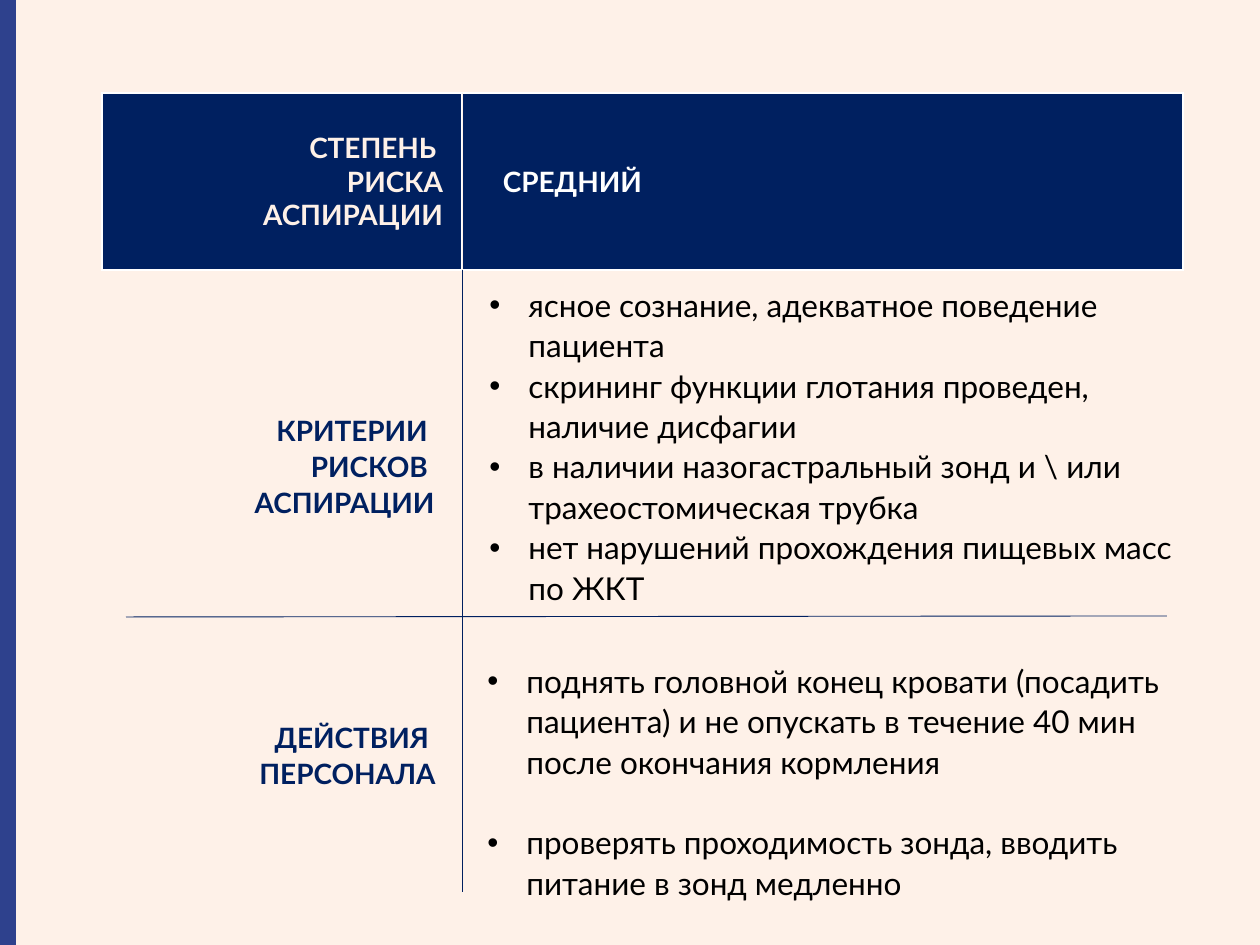
from pptx import Presentation
from pptx.dml.color import RGBColor
from pptx.enum.shapes import MSO_CONNECTOR, MSO_SHAPE
from pptx.enum.text import MSO_ANCHOR, PP_ALIGN
from pptx.oxml.ns import qn
from pptx.util import Emu, Pt
from lxml import etree

RECT, STRAIGHT = MSO_SHAPE.RECTANGLE, MSO_CONNECTOR.STRAIGHT
LEFT, RIGHT = PP_ALIGN.LEFT, PP_ALIGN.RIGHT
TOP, MIDDLE, BOTTOM = MSO_ANCHOR.TOP, MSO_ANCHOR.MIDDLE, MSO_ANCHOR.BOTTOM

# Content
HEADER = [["СТЕПЕНЬ ", "РИСКА", "АСПИРАЦИИ"], ["СРЕДНИЙ"]]
CRITERIA_LABEL = ["КРИТЕРИИ ", "РИСКОВ ", "АСПИРАЦИИ"]
CRITERIA = [
    "ясное сознание, адекватное поведение пациента",
    "скрининг функции глотания проведен, наличие дисфагии",
    "в наличии назогастральный зонд и \\ или трахеостомическая трубка",
    "нет нарушений прохождения пищевых масс по ЖКТ",
]
ACTIONS_LABEL = ["ДЕЙСТВИЯ ", "ПЕРСОНАЛА"]
ACTIONS = [
    "поднять головной конец кровати (посадить пациента) и не опускать "
    "в течение 40 мин после окончания кормления",
    "проверять проходимость зонда, вводить питание в зонд медленно",
]

THEME = {
    "font": "Lato", "label": 16, "body": 18, "spacing": 1.07, "line": 0.5,
    "paper": "FEF1E8", "navy": "002060", "stripe": "2E418D",
    "white": "FFFFFF", "black": "000000",
}

# Geometry in px
SLIDE_W, SLIDE_H = 1260, 945
TABLE_X, TABLE_Y, TABLE_H = 102, 93, 177
COLUMNS = [360, 721]
DIVIDER_X = TABLE_X + COLUMNS[0]
HEADER_BOTTOM = TABLE_Y + TABLE_H
HANGING = 39


def px(n):
    return Emu(round(n * 914400 / 126))


def color(name):
    return RGBColor.from_string(THEME[name])


def write(frame, lines, size, ink, bold=False, align=LEFT, spacing=None):
    frame.word_wrap = True
    frame.text = "\n".join(lines)
    for paragraph in frame.paragraphs:
        paragraph.alignment = align
        paragraph.line_spacing = spacing
        font = paragraph.runs[0].font
        font.name, font.size, font.bold = THEME["font"], Pt(THEME[size]), bold
        font.color.rgb = color(ink)


def add_text(box, lines, anchor, **style):
    frame = slide.shapes.add_textbox(*map(px, box)).text_frame
    frame.vertical_anchor = anchor
    write(frame, lines, spacing=THEME["spacing"], **style)
    return frame


def add_label(box, lines):
    add_text(box, lines, BOTTOM, size="label", ink="navy", bold=True, align=RIGHT)


def add_bullets(box, items, gap=0):
    frame = add_text(box, items, TOP, size="body", ink="black")
    for i, paragraph in enumerate(frame.paragraphs):
        paragraph.space_before = Pt(gap if i else 0)
        props = paragraph._p.get_or_add_pPr()
        props.set("marL", str(px(HANGING)))
        props.set("indent", str(-px(HANGING)))
        etree.SubElement(props, qn("a:buFont")).set("typeface", "Arial")
        etree.SubElement(props, qn("a:buChar")).set("char", "•")


def add_line(x1, y1, x2, y2, ink):
    line = slide.shapes.add_connector(STRAIGHT, *map(px, (x1, y1, x2, y2)))
    line.line.color.rgb = color(ink)
    line.line.width = Pt(THEME["line"])
    etree.SubElement(line._element.spPr, qn("a:effectLst"))


prs = Presentation()
prs.slide_width, prs.slide_height = px(SLIDE_W), px(SLIDE_H)
slide = prs.slides.add_slide(prs.slide_layouts[6])
slide.background.fill.solid()
slide.background.fill.fore_color.rgb = color("paper")

# Side stripe
stripe = slide.shapes.add_shape(RECT, 0, 0, px(16), px(SLIDE_H))
stripe.shadow.inherit = False
stripe.fill.solid()
stripe.fill.fore_color.rgb = color("stripe")
stripe.line.fill.background()

# Header table
table = slide.shapes.add_table(
    1, len(COLUMNS), px(TABLE_X), px(TABLE_Y), px(sum(COLUMNS)), px(TABLE_H)).table
table.first_row = table.horz_banding = False
table.rows[0].height = px(TABLE_H)
for i, (width, lines, ink, align) in enumerate(
        zip(COLUMNS, HEADER, ("paper", "white"), (RIGHT, LEFT))):
    table.columns[i].width = px(width)
    cell = table.cell(0, i)
    cell.fill.solid()
    cell.fill.fore_color.rgb = color("navy")
    cell.vertical_anchor = MIDDLE
    cell.margin_left, cell.margin_right = px(41), px(19)
    write(cell.text_frame, lines, "label", ink, True, align)

# Dividers
add_line(DIVIDER_X, HEADER_BOTTOM, DIVIDER_X, 892, "navy")
add_line(126, 617, 1167, 616, "navy")
add_line(DIVIDER_X, TABLE_Y, DIVIDER_X, HEADER_BOTTOM, "paper")

# Criteria and staff actions
add_label((92, 394, 355, 131), CRITERIA_LABEL)
add_label((241, 714, 207, 82), ACTIONS_LABEL)
add_bullets((477, 277, 712, 339), CRITERIA)
add_bullets((475, 653, 727, 217), ACTIONS, gap=23)

prs.save("out.pptx")
